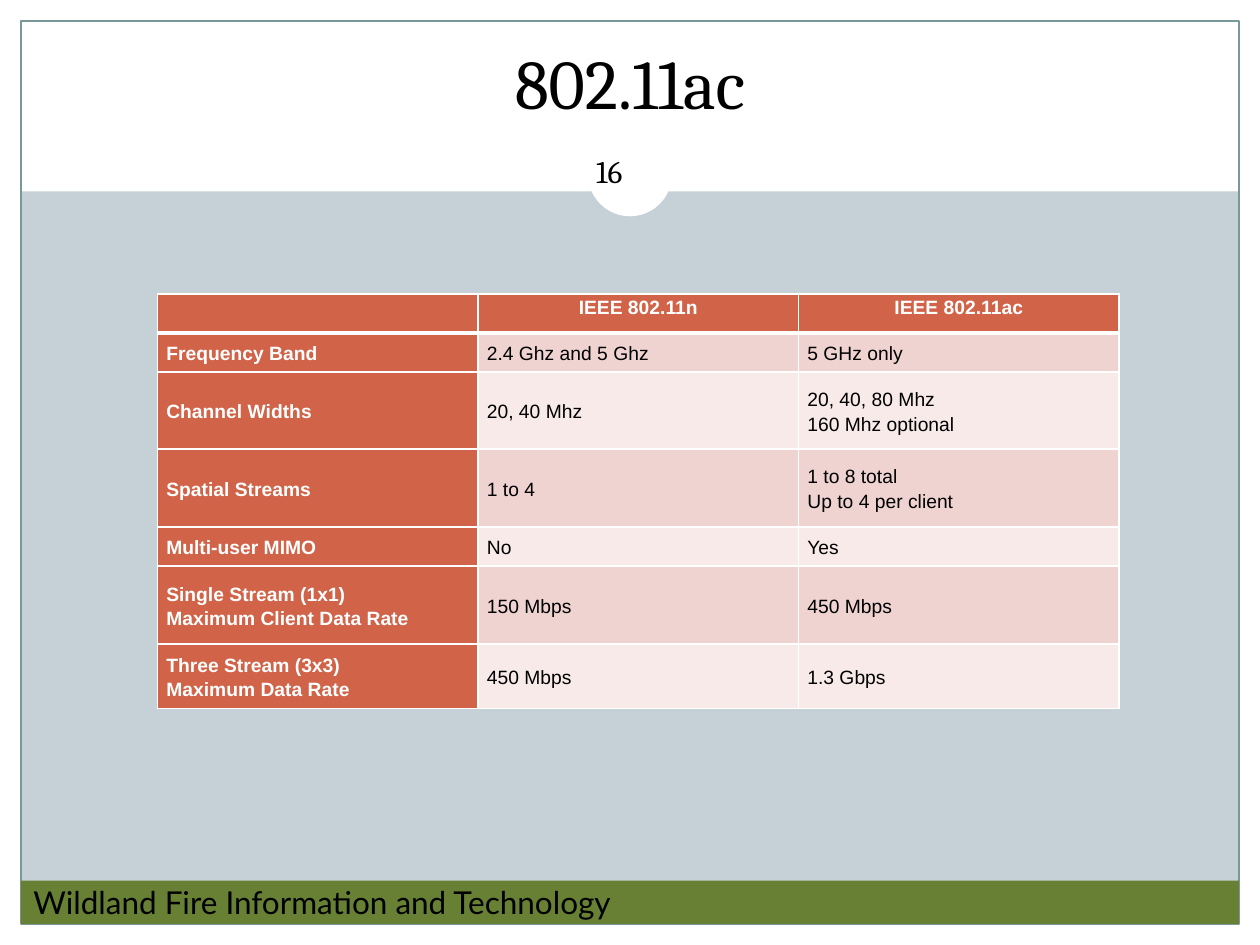
import pptx
import pptx.util
import pptx.dml.color
import pptx.enum.shapes
import pptx.enum.text
import lxml.etree

RGBColor = pptx.dml.color.RGBColor
WHITE = RGBColor(0xFF, 0xFF, 0xFF)
BLACK = RGBColor(0, 0, 0)
BACK = RGBColor(0xC5, 0xD1, 0xD7)
FRAME = RGBColor(0x7B, 0x98, 0x99)
GREEN = RGBColor(0x67, 0x80, 0x34)
RUST = RGBColor(0xD1, 0x63, 0x49)
BANDS = RGBColor(0xEE, 0xD3, 0xD0), RGBColor(0xF7, 0xEA, 0xE9)

SHAPE = pptx.enum.shapes.MSO_SHAPE
ANCHOR = pptx.enum.text.MSO_ANCHOR
ALIGN = pptx.enum.text.PP_ALIGN

# The slide is a grid of 60 columns and 45 rows
COLS, ROWS = 60, 45
UNIT = pptx.util.Inches(10) / COLS

HEIGHTS = [1.86, 1.86, 3.66, 3.72, 1.86, 3.72, 3.06]
DATA = [
    ["", "IEEE 802.11n", "IEEE 802.11ac"],
    ["Frequency Band", "2.4 Ghz and 5 Ghz", "5 GHz only"],
    ["Channel Widths", "20, 40 Mhz", "20, 40, 80 Mhz\n160 Mhz optional"],
    ["Spatial Streams", "1 to 4", "1 to 8 total\nUp to 4 per client"],
    ["Multi-user MIMO", "No", "Yes"],
    ["Single Stream (1x1)\nMaximum Client Data Rate", "150 Mbps", "450 Mbps"],
    ["Three Stream (3x3)\nMaximum Data Rate", "450 Mbps", "1.3 Gbps"],
]


def grid(*cells):
    return [round(cell * UNIT) for cell in cells]


def style(frame, size, face, color, bold=False, align=ALIGN.LEFT, space=None):
    for para in frame.paragraphs:
        para.alignment = align
        para.line_spacing = space
        for run in para.runs:
            run.font.size = pptx.util.Pt(size)
            run.font.name = face
            run.font.bold = bold
            run.font.color.rgb = color


def add_shape(slide, box, fill=None, line=None, kind=SHAPE.RECTANGLE):
    shape = slide.shapes.add_shape(kind, *grid(*box))
    shape.shadow.inherit = False
    if fill is None:
        shape.fill.background()
    else:
        shape.fill.solid()
        shape.fill.fore_color.rgb = fill
    if line is None:
        shape.line.fill.background()
    else:
        shape.line.color.rgb = line
        shape.line.width = pptx.util.Pt(0.75)
    return shape


def add_text(slide, box, text, size, anchor, align, inset):
    frame = slide.shapes.add_textbox(*grid(*box)).text_frame
    frame.word_wrap = True
    frame.vertical_anchor = anchor
    frame.margin_top = frame.margin_bottom = pptx.util.Inches(inset)
    frame.text = text
    style(frame, size, "Cambria", BLACK, align=align)


def add_edges(cell, head, below):
    props = cell._tc.get_or_add_tcPr()
    for side in "LRTB":
        wide = 3 if (head and side == "B") or (below and side == "T") else 1
        edge = lxml.etree.SubElement(
            props, pptx.oxml.ns.qn("a:ln" + side), w=str(pptx.util.Pt(wide)))
        fill = lxml.etree.SubElement(edge, pptx.oxml.ns.qn("a:solidFill"))
        lxml.etree.SubElement(
            fill, pptx.oxml.ns.qn("a:srgbClr"), val=str(WHITE))


def fill_cell(cell, text, row, col):
    head = row == 0
    label = head or col == 0
    add_edges(cell, head, row == 1)
    cell.fill.solid()
    cell.fill.fore_color.rgb = RUST if label else BANDS[(row - 1) % 2]
    cell.margin_left = cell.margin_right = pptx.util.Inches(0.07)
    cell.margin_top = cell.margin_bottom = 0
    cell.vertical_anchor = ANCHOR.TOP if head else ANCHOR.MIDDLE
    cell.text_frame.text = text
    if not text:
        cell.text_frame.paragraphs[0].font.size = pptx.util.Pt(11)
        return
    style(cell.text_frame, 11, "Arial", WHITE if label else BLACK, label,
          ALIGN.CENTER if head else ALIGN.LEFT, 1.15)


def add_table(slide, left, top, width):
    shape = slide.shapes.add_table(
        len(DATA), len(DATA[0]), *grid(left, top, width, sum(HEIGHTS)))
    table = shape.table
    for col in table.columns:
        col.width = grid(width / len(DATA[0]))[0]
    for row, texts in enumerate(DATA):
        table.rows[row].height = grid(HEIGHTS[row])[0]
        for col, text in enumerate(texts):
            fill_cell(table.cell(row, col), text, row, col)


def add_frame(slide):
    # White margins and title band
    for box in [(0, ROWS - 1, COLS, 1), (0, 0, COLS, 9.12),
                (0, 0, 1, ROWS), (COLS - 1, 0, 1, ROWS)]:
        add_shape(slide, box, WHITE)
    add_shape(slide, (1, 1, COLS - 2, ROWS - 2), line=FRAME)
    # Disc behind the page number
    add_shape(slide, (28, 6.3, 4, 4), WHITE, kind=SHAPE.OVAL)
    # Footer bar
    bar = add_shape(slide, (1, 41.94, COLS - 2, 2.06), GREEN)
    frame = bar.text_frame
    frame.word_wrap = False
    frame.vertical_anchor = ANCHOR.MIDDLE
    frame.text = "Wildland Fire Information and Technology"
    style(frame, 18, "Lato", BLACK)


def main():
    deck = pptx.Presentation()
    deck.slide_width, deck.slide_height = grid(COLS, ROWS)
    slide = deck.slides.add_slide(deck.slide_layouts[6])
    slide.background.fill.solid()
    slide.background.fill.fore_color.rgb = BACK

    add_frame(slide)
    # Title and page number
    add_text(slide, (2, 1.5, 56, 5), "802.11ac", 40,
             ANCHOR.BOTTOM, ALIGN.CENTER, 0.1)
    add_text(slide, (27.8, 6.72, 4.4, 2.88), "16", 18,
             ANCHOR.MIDDLE, ALIGN.LEFT, 0.05)
    # Comparison of the two standards
    add_table(slide, 7.5, 14, 45.8)
    deck.save("out.pptx")


if __name__ == "__main__":
    main()
